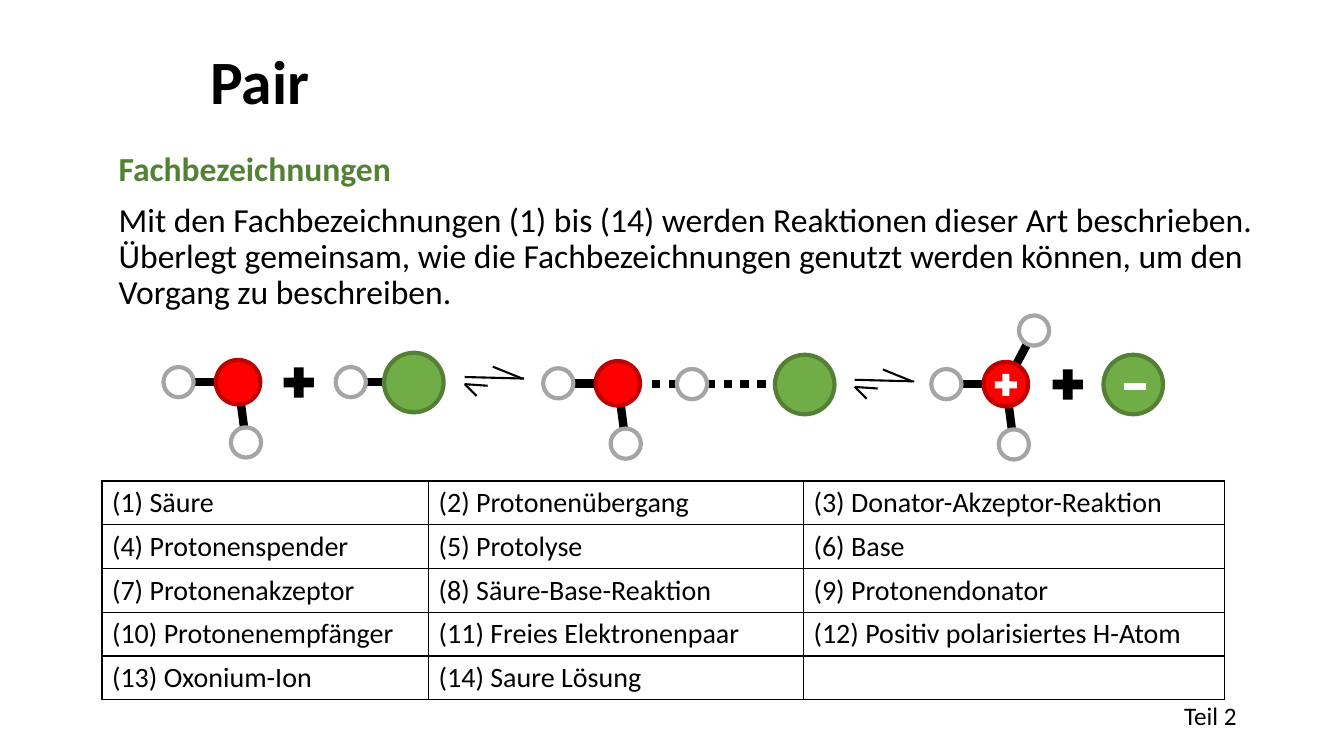
from dataclasses import dataclass

from lxml.etree import SubElement
from pptx import Presentation
from pptx.dml.color import RGBColor
from pptx.enum.dml import MSO_LINE
from pptx.enum.shapes import MSO_CONNECTOR, MSO_SHAPE
from pptx.enum.text import MSO_ANCHOR
from pptx.oxml.ns import qn
from pptx.util import Cm, Pt


@dataclass(frozen=True)
class Theme:
    font: str = "Calibri"
    black: str = "000000"
    white: str = "FFFFFF"
    accent: str = "548235"
    hydrogen: tuple = ("FFFFFF", "A5A5A5")
    oxygen: tuple = ("FF0000", "C00000")
    chlorine: tuple = ("70AD47", "538035")
    title: int = 44
    body: int = 24
    cell: int = 20
    note: int = 18
    rim: float = 3
    bond: float = 6
    arrow: float = 1.5
    border: float = 1


TERMS = [
    ["(1) Säure", "(2) Protonenübergang", "(3) Donator-Akzeptor-Reaktion"],
    ["(4) Protonenspender", "(5) Protolyse", "(6) Base"],
    ["(7) Protonenakzeptor", "(8) Säure-Base-Reaktion", "(9) Protonendonator"],
    ["(10) Protonenempfänger", "(11) Freies Elektronenpaar",
     "(12) Positiv polarisiertes H-Atom"],
    ["(13) Oxonium-Ion", "(14) Saure Lösung", ""],
]
TASK = ("Mit den Fachbezeichnungen (1) bis (14) werden Reaktionen dieser Art "
        "beschrieben. Überlegt gemeinsam, wie die Fachbezeichnungen genutzt "
        "werden können, um den Vorgang zu beschreiben.")

# Hydrogen places relative to the oxygen, in cm
LEFT, BELOW, ABOVE = (-1.5, 0), (0.2, 1.52), (0.71, -1.35)
# Strokes of the equilibrium arrow, relative to its upper left end, in cm
STROKES = [(0, 0, 1.5, 0.04), (0.71, -0.26, 1.45, 0.04),
           (0.58, 0.22, 0, 0.18), (0.3, 0.48, 0, 0.18)]


class Canvas:
    """Draws on one slide; all lengths are in cm."""

    def __init__(self, slide, theme):
        self.shapes = slide.shapes
        self.theme = theme

    def style(self, para, size, color=None, bold=False):
        for run in para.runs:
            run.font.name = self.theme.font
            run.font.size = Pt(size)
            run.font.bold = bold
            run.font.color.rgb = RGBColor.from_string(color or self.theme.black)

    def text(self, x, y, w, h, lines, wrap=True):
        """Add a text box; each line is (text, size, color, bold)."""
        frame = self.shapes.add_textbox(Cm(x), Cm(y), Cm(w), Cm(h)).text_frame
        frame.word_wrap = wrap
        frame.text = "\n".join(line[0] for line in lines)
        for para, line in zip(frame.paragraphs, lines):
            self.style(para, *line[1:])
        return frame

    def line(self, x1, y1, x2, y2, width, dash=None):
        line = self.shapes.add_connector(
            MSO_CONNECTOR.STRAIGHT, Cm(x1), Cm(y1), Cm(x2), Cm(y2))
        line.line.color.rgb = RGBColor.from_string(self.theme.black)
        line.line.width = Pt(width)
        if dash:
            line.line.dash_style = dash
        SubElement(line._element.spPr, qn("a:effectLst"))

    def shape(self, kind, x, y, size, fill, rim=None):
        """Add a square preset shape centred on x, y."""
        shape = self.shapes.add_shape(
            kind, Cm(x - size / 2), Cm(y - size / 2), Cm(size), Cm(size))
        shape.shadow.inherit = False
        shape.fill.solid()
        shape.fill.fore_color.rgb = RGBColor.from_string(fill)
        if rim:
            shape.line.color.rgb = RGBColor.from_string(rim)
            shape.line.width = Pt(self.theme.rim)
        else:
            shape.line.fill.background()

    def atom(self, x, y, size, colors):
        self.shape(MSO_SHAPE.OVAL, x, y, size, *colors)

    def hydrogen(self, x, y):
        self.atom(x, y, 0.76, self.theme.hydrogen)

    def chlorine(self, x, y):
        self.atom(x, y, 1.5, self.theme.chlorine)

    def oxygen(self, x, y, places):
        """Add an oxygen atom with hydrogens bound at the given places."""
        for dx, dy in places:
            self.line(x, y, x + dx, y + dy, self.theme.bond)
            self.hydrogen(x + dx, y + dy)
        self.atom(x, y, 1.12, self.theme.oxygen)

    def arrow(self, x, y):
        for x1, y1, x2, y2 in STROKES:
            self.line(x + x1, y + y1, x + x2, y + y2, self.theme.arrow)

    def border(self, cell):
        props = cell._tc.get_or_add_tcPr()
        for i, side in enumerate(("lnL", "lnR", "lnT", "lnB")):
            edge = props.makeelement(qn(f"a:{side}"),
                                     {"w": str(Pt(self.theme.border))})
            fill = SubElement(edge, qn("a:solidFill"))
            SubElement(fill, qn("a:srgbClr"), val=self.theme.black)
            props.insert(i, edge)

    def table(self, x, y, widths, height, rows):
        table = self.shapes.add_table(
            len(rows), len(widths), Cm(x), Cm(y),
            Cm(sum(widths)), Cm(height * len(rows))).table
        table.first_row = table.horz_banding = False
        for col, width in zip(table.columns, widths):
            col.width = Cm(width)
        for r, row in enumerate(rows):
            for c, term in enumerate(row):
                cell = table.cell(r, c)
                cell.fill.background()
                self.border(cell)
                if term:
                    cell.text_frame.text = term
                    self.style(cell.text_frame.paragraphs[0], self.theme.cell)


def react(canvas):
    """Draw the proton transfer from left to right."""
    theme = canvas.theme
    plus, minus = MSO_SHAPE.MATH_PLUS, MSO_SHAPE.MATH_MINUS

    canvas.oxygen(6, 9.63, [LEFT, BELOW])
    canvas.shape(plus, 7.53, 9.64, 1.04, theme.black)
    canvas.line(8.84, 9.63, 10.43, 9.63, theme.bond)
    canvas.hydrogen(8.84, 9.63)
    canvas.chlorine(10.43, 9.64)
    canvas.arrow(11.71, 9.5)

    canvas.oxygen(15.57, 9.66, [LEFT, BELOW])
    for start, end in ((16.43, 17.2), (17.81, 19.3)):
        canvas.line(start, 9.68, end, 9.68, theme.bond, MSO_LINE.ROUND_DOT)
    canvas.hydrogen(17.44, 9.68)
    canvas.chlorine(20.28, 9.69)
    canvas.arrow(21.54, 9.57)

    canvas.oxygen(25.35, 9.68, [LEFT, BELOW, ABOVE])
    canvas.shape(plus, 25.35, 9.7, 0.76, theme.white)
    canvas.shape(plus, 26.91, 9.69, 1.04, theme.black)
    canvas.chlorine(28.56, 9.69)
    canvas.shape(minus, 28.6, 9.75, 0.76, theme.white)


def main():
    deck = Presentation()
    deck.slide_width, deck.slide_height = Cm(33.87), Cm(19.05)
    theme = Theme()
    canvas = Canvas(deck.slides.add_slide(deck.slide_layouts[6]), theme)

    canvas.text(29.59, 17.53, 1.96, 1.02, [("Teil 2", theme.note)], wrap=False)
    canvas.table(2.57, 12.12, [8.23, 9.45, 10.62], 1.1, TERMS)
    react(canvas)

    title = canvas.text(5.05, 1.14, 12.78, 1.96,
                        [("Pair", theme.title, theme.black, True)])
    title.vertical_anchor = MSO_ANCHOR.MIDDLE
    title.paragraphs[0].line_spacing = 0.9
    body = canvas.text(2.74, 3.73, 29.21, 4.45, [
        ("Fachbezeichnungen", theme.body, theme.accent, True),
        (TASK, theme.body)])
    for para in body.paragraphs:
        para.line_spacing = 0.9
        para.space_before = Pt(10)
    deck.save("out.pptx")


if __name__ == "__main__":
    main()
